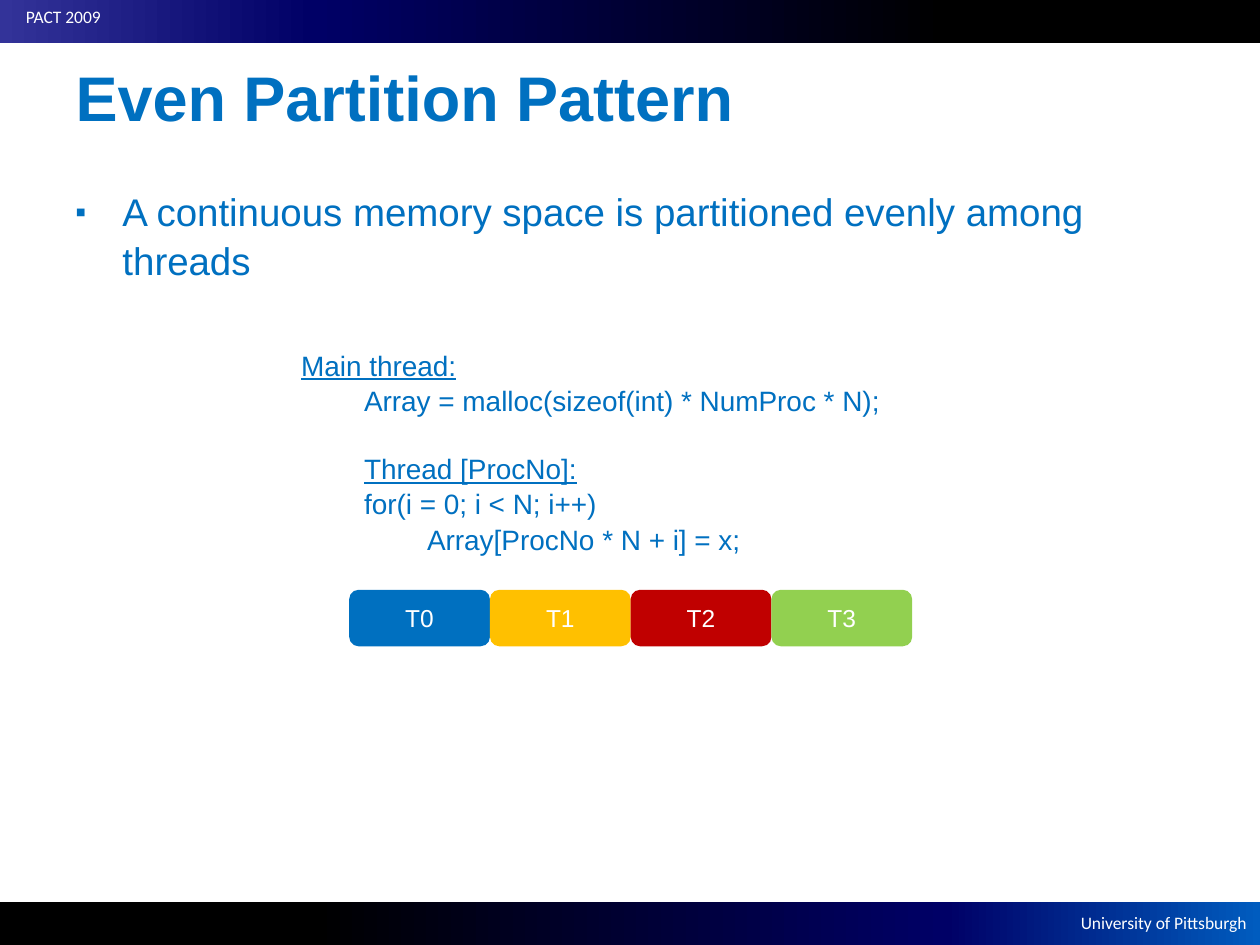
from lxml.etree import SubElement
from pptx import Presentation
from pptx.dml.color import RGBColor
from pptx.enum.shapes import MSO_SHAPE
from pptx.enum.text import MSO_ANCHOR, MSO_AUTO_SIZE, PP_ALIGN
from pptx.oxml.ns import qn
from pptx.util import Cm, Pt

BLUE = "0070C0"
WHITE = "FFFFFF"


def rgb(value):
    """Turn a hex string into a colour."""
    return RGBColor.from_string(value)


def add_run(p, text, size, color, font="Arial", bold=False, underline=False):
    """Add one formatted run to a paragraph."""
    r = p.add_run()
    r.text = text
    r.font.size = Pt(size)
    r.font.name = font
    r.font.bold = bold
    r.font.underline = underline
    r.font.color.rgb = rgb(color)


def add_text_frame(s, left, top, width, height):
    """Add a wrapping text box and return its text frame."""
    tf = s.shapes.add_textbox(Cm(left), Cm(top), Cm(width), Cm(height)).text_frame
    tf.word_wrap = True
    return tf


def add_band(s, top, stops, label, label_left, label_top, label_width):
    """Add a full-width gradient band with a right-aligned label."""
    sp = s.shapes.add_shape(MSO_SHAPE.RECTANGLE, 0, Cm(top), Cm(25.4), Cm(0.87))
    sp.shadow.inherit = False
    sp.line.fill.background()
    sp.fill.gradient()
    sp.fill.gradient_angle = 0
    gs_list = sp._element.spPr.find(".//" + qn("a:gsLst"))
    for gs in list(gs_list):
        gs_list.remove(gs)
    for position, color in stops:
        gs = SubElement(gs_list, qn("a:gs"), pos=str(position * 1000))
        SubElement(gs, qn("a:srgbClr"), val=color)
    p = add_text_frame(s, label_left, top + label_top, label_width, 0.68).paragraphs[0]
    p.alignment = PP_ALIGN.RIGHT
    add_run(p, label, 10, WHITE, "Calibri")


def add_title(s, text, left, top, width, height):
    """Place and format the title placeholder."""
    sp = s.shapes.title
    sp.left, sp.top, sp.width, sp.height = Cm(left), Cm(top), Cm(width), Cm(height)
    tf = sp.text_frame
    tf.auto_size = MSO_AUTO_SIZE.NONE
    tf.vertical_anchor = MSO_ANCHOR.MIDDLE
    p = tf.paragraphs[0]
    p.alignment = PP_ALIGN.LEFT
    add_run(p, text, 36, BLUE, bold=True)


def add_bullet(s, text, left, top, width, height):
    """Add a text box with one square-bulleted paragraph."""
    p = add_text_frame(s, left, top, width, height).paragraphs[0]
    p.line_spacing = 1.05
    pPr = p._p.get_or_add_pPr()
    pPr.set("marL", str(Cm(0.95)))
    pPr.set("indent", str(-Cm(0.95)))
    SubElement(SubElement(pPr, qn("a:buClr")), qn("a:srgbClr"), val=BLUE)
    SubElement(pPr, qn("a:buSzPct"), val="80000")
    SubElement(pPr, qn("a:buFont"), typeface="Arial")
    SubElement(pPr, qn("a:buChar"), char="▪")
    add_run(p, text, 22, BLUE)


def add_code(s, lines, left, top, width, height):
    """Add code lines given as text, indent level, underline and space before."""
    tf = add_text_frame(s, left, top, width, height)
    for i, (text, level, underline, space) in enumerate(lines):
        p = tf.paragraphs[0] if i == 0 else tf.add_paragraph()
        p.line_spacing = 1.05
        p.space_before = Pt(space)
        p._p.get_or_add_pPr().set("marL", str(Cm(1.27 * level)))
        add_run(p, text, 16, BLUE, underline=underline)


def add_partitions(s, parts, left, top, width, height):
    """Add a group of equal rounded blocks, one for each thread."""
    group = s.shapes.add_group_shape()
    step = width / len(parts)
    for i, (label, color) in enumerate(parts):
        sp = group.shapes.add_shape(MSO_SHAPE.ROUNDED_RECTANGLE,
                                    Cm(left + i * step), Cm(top), Cm(step), Cm(height))
        sp.shadow.inherit = False
        sp.fill.solid()
        sp.fill.fore_color.rgb = rgb(color)
        sp.line.fill.background()
        tf = sp.text_frame
        tf.margin_left = tf.margin_right = tf.margin_top = tf.margin_bottom = 0
        tf.vertical_anchor = MSO_ANCHOR.MIDDLE
        p = tf.paragraphs[0]
        p.alignment = PP_ALIGN.CENTER
        add_run(p, label, 14, WHITE)


def main():
    """Build and save the slide."""
    prs = Presentation()
    prs.slide_width, prs.slide_height = Cm(25.4), Cm(19.05)
    s = prs.slides.add_slide(prs.slide_layouts[5])
    add_band(s, 18.18, [(0, "000000"), (25, "000000"), (75, "000066"), (100, "005CBF")],
             "University of Pittsburgh", 21.16, 0.08, 4.22)
    add_band(s, 0, [(0, "333399"), (25, "000066"), (75, "000000"), (100, "000000")],
             "PACT 2009", 0, 0, 2.28)
    add_title(s, "Even Partition Pattern", 1.27, 0.36, 22.86, 3.18)
    add_bullet(s, "A continuous memory space is partitioned evenly among threads",
               1.27, 3.63, 22.86, 13.72)
    add_code(s, [
        ("Main thread:", 0, True, 0),
        ("Array = malloc(sizeof(int) * NumProc * N);", 1, False, 0),
        ("Thread [ProcNo]:", 1, True, 19),
        ("for(i = 0; i < N; i++)", 1, False, 0),
        ("Array[ProcNo * N + i] = x;", 2, False, 0),
    ], 5.82, 6.86, 13.16, 4.37)
    add_partitions(s, [("T0", BLUE), ("T1", "FFC000"), ("T2", "C00000"), ("T3", "92D050")],
                   7.04, 11.89, 11.35, 1.14)
    prs.save("out.pptx")


if __name__ == "__main__":
    main()
